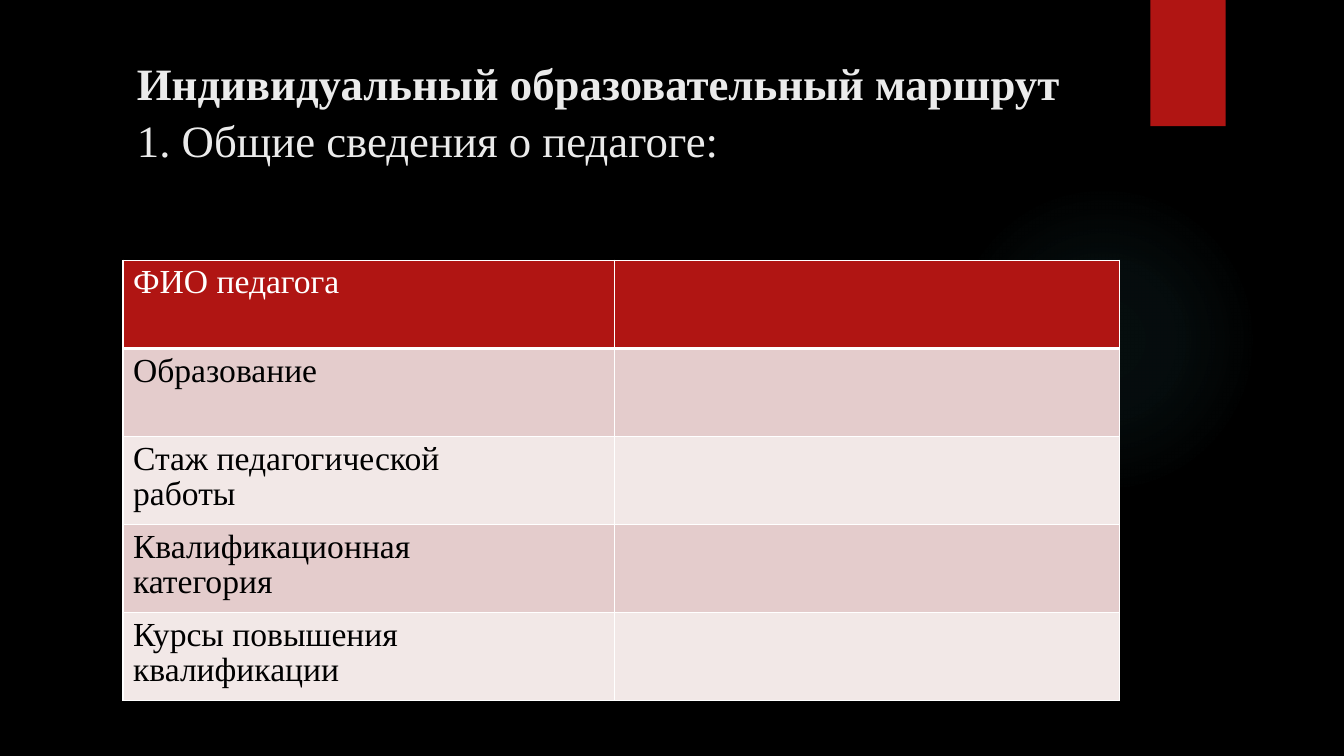
import pptx
import pptx.util
import pptx.dml.color
import pptx.enum.shapes
import pptx.enum.text
import pptx.oxml
from pptx.oxml.ns import nsdecls

Cm, Pt = pptx.util.Cm, pptx.util.Pt
RGB = pptx.dml.color.RGBColor
SHAPE = pptx.enum.shapes.MSO_SHAPE

TITLE = ("Индивидуальный образовательный маршрут", "1. Общие сведения о педагоге:")
ROWS = [
    "ФИО педагога",
    "Образование",
    "Стаж педагогической\nработы",
    "Квалификационная\nкатегория",
    "Курсы повышения\nквалификации",
]
COLS = (Cm(12.38), Cm(12.73))
HIGH = Cm(2.22)
GLOW = [(0, 7), (36, 6), (69, 0), (100, 0)]  # position %, opacity %

FONT = "Times New Roman"
BLACK = RGB(0x00, 0x00, 0x00)
WHITE = RGB(0xFF, 0xFF, 0xFF)
PALE = RGB(0xEB, 0xEB, 0xEB)
RED = RGB(0xB0, 0x15, 0x13)
BANDS = (RGB(0xF2, 0xE8, 0xE7), RGB(0xE4, 0xCC, 0xCC))
TEAL = RGB(0x50, 0xB9, 0xC1)


def make(xml):
    """Parse one drawing element, adding the namespace to its root tag."""
    head, rest = xml.split(" ", 1)
    return pptx.oxml.parse_xml(f"{head} {nsdecls('a')} {rest}")


def style(para, size, color, gap):
    para.line_spacing = gap
    for run in para.runs:
        run.font.name = FONT
        run.font.size = Pt(size)
        run.font.color.rgb = color


def add_shape(slide, kind, *box):
    shape = slide.shapes.add_shape(kind, *box)
    shape.shadow.inherit = False
    shape.line.fill.background()
    return shape


def add_glow(slide):
    glow = add_shape(slide, SHAPE.OVAL, Cm(23.9), Cm(4.65), Cm(7.82), Cm(7.82))
    glow.fill.background()
    stops = "".join(
        f'<a:gs pos="{pos * 1000}"><a:srgbClr val="{TEAL}">'
        f'<a:alpha val="{alpha * 1000}"/></a:srgbClr></a:gs>'
        for pos, alpha in GLOW
    )
    grad = make(
        f'<a:gradFill rotWithShape="1"><a:gsLst>{stops}</a:gsLst><a:path path="circle">'
        '<a:fillToRect l="50000" t="50000" r="50000" b="50000"/></a:path></a:gradFill>'
    )
    props = glow.element.spPr
    props.replace(props.find(pptx.oxml.ns.qn("a:noFill")), grad)


def add_tab(slide):
    tab = add_shape(slide, SHAPE.RECTANGLE, Cm(28.99), 0, Cm(1.9), Cm(3.18))
    tab.fill.solid()
    tab.fill.fore_color.rgb = RED
    shade = make(
        f'<a:outerShdw blurRad="{Pt(3)}" dist="{Pt(2)}" dir="5400000" rotWithShape="0">'
        f'<a:srgbClr val="{BLACK}"><a:alpha val="45000"/></a:srgbClr></a:outerShdw>'
    )
    tab.element.spPr.find(pptx.oxml.ns.qn("a:effectLst")).append(shade)


def add_title(slide):
    frame = slide.shapes.add_textbox(Cm(3.2), Cm(0.91), Cm(24.51), Cm(3.4)).text_frame
    frame.word_wrap = True
    frame.vertical_anchor = pptx.enum.text.MSO_ANCHOR.BOTTOM
    para = frame.paragraphs[0]
    para.text = "\v".join(TITLE)
    style(para, 32, PALE, 1.05)
    para.runs[0].font.bold = True


def edge(cell, head):
    props = cell._tc.get_or_add_tcPr()
    for side in "LRTB":
        wide = Pt(3 if head and side == "B" else 1)
        props.append(make(
            f'<a:ln{side} w="{wide}"><a:solidFill><a:srgbClr val="{WHITE}"/>'
            f"</a:solidFill></a:ln{side}>"
        ))


def add_grid(slide):
    grid = slide.shapes.add_table(
        len(ROWS), len(COLS), Cm(3.1), Cm(6.56), sum(COLS), HIGH * len(ROWS)
    ).table
    grid.horz_banding = False
    for col, wide in zip(grid.columns, COLS):
        col.width = wide
    for i, label in enumerate(ROWS):
        grid.rows[i].height = HIGH
        for cell in grid.rows[i].cells:
            edge(cell, i == 0)
            cell.fill.solid()
            cell.fill.fore_color.rgb = BANDS[i % 2] if i else RED
        frame = grid.cell(i, 0).text_frame
        frame.text = label
        for para in frame.paragraphs:
            style(para, 24, BLACK if i else WHITE, 0.96)
            para.font.bold = False


def main():
    deck = pptx.Presentation()
    deck.slide_width, deck.slide_height = Cm(33.87), Cm(19.05)
    slide = deck.slides.add_slide(deck.slide_layouts[6])
    slide.background.fill.solid()
    slide.background.fill.fore_color.rgb = BLACK
    add_glow(slide)
    add_tab(slide)
    add_title(slide)
    add_grid(slide)
    deck.save("out.pptx")


if __name__ == "__main__":
    main()
